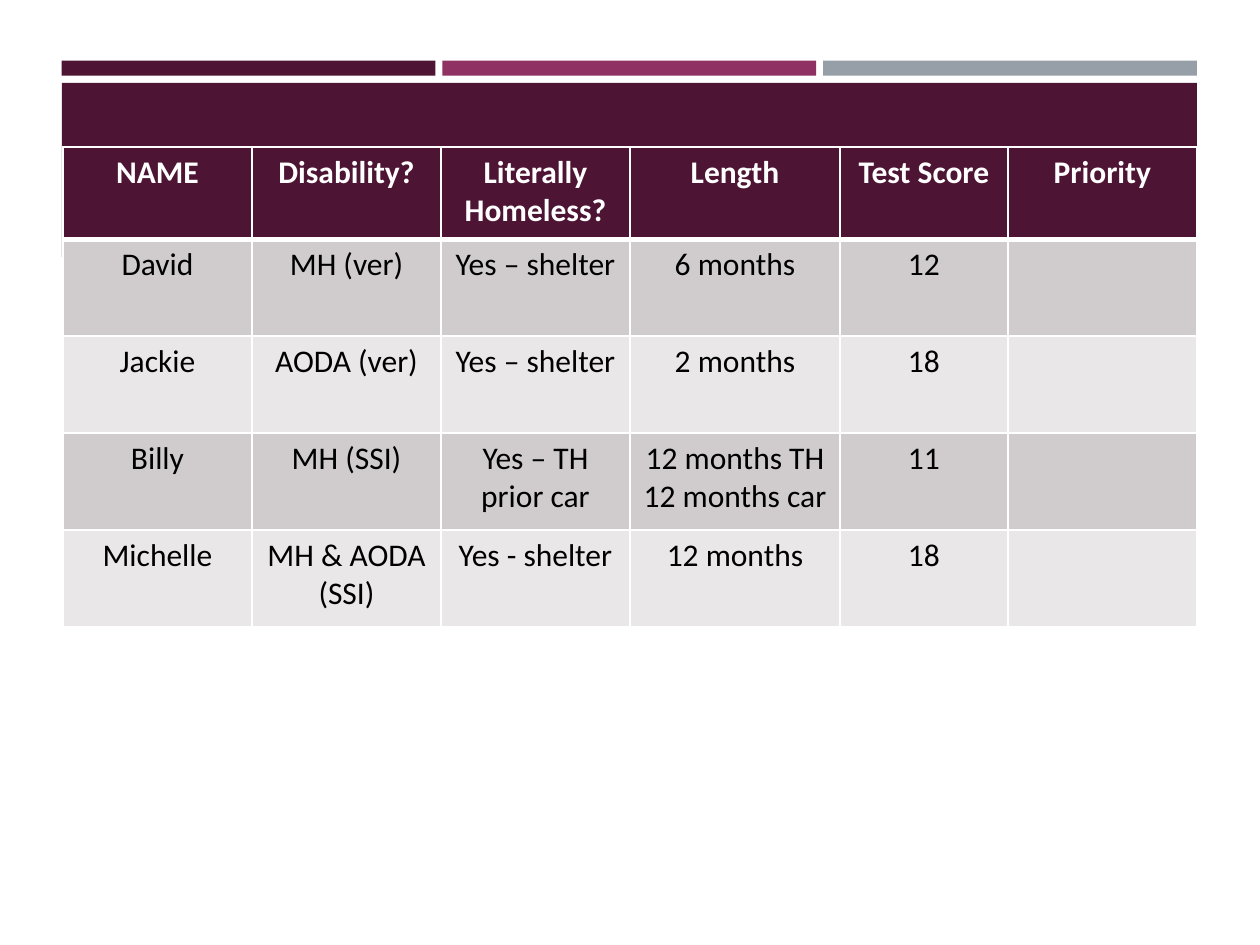
from lxml.etree import SubElement
from pptx import Presentation
from pptx.dml.color import RGBColor
from pptx.enum.shapes import MSO_SHAPE
from pptx.enum.text import PP_ALIGN
from pptx.oxml.ns import qn
from pptx.util import Pt

PLUM, MAGENTA, GREY = "4D1434", "903163", "969FA7"
WHITE, BLACK = "FFFFFF", "000000"
ROW_FILLS = ["D0CCCE", "E9E7E8"]
COLUMN_WIDTHS = [108, 108, 108, 120, 96, 108]
ROW_HEIGHTS = [52.7, 55.4, 55.4, 55.4, 55.4]
ROWS = [
    ["NAME", "Disability?", "Literally Homeless?", "Length", "Test Score", "Priority"],
    ["David", "MH (ver)", "Yes – shelter", "6 months", "12", ""],
    ["Jackie", "AODA (ver)", "Yes – shelter", "2 months", "18", ""],
    ["Billy", "MH (SSI)", "Yes – TH prior car", "12 months TH 12 months car", "11", ""],
    ["Michelle", "MH & AODA (SSI)", "Yes - shelter", "12 months", "18", ""],
]


def set_fill(item, color):
    item.fill.solid()
    item.fill.fore_color.rgb = RGBColor.from_string(color)


def add_rectangle(slide, left, top, width, height, color):
    shape = slide.shapes.add_shape(
        MSO_SHAPE.RECTANGLE, Pt(left), Pt(top), Pt(width), Pt(height))
    shape.shadow.inherit = False
    shape.line.fill.background()
    set_fill(shape, color)


def add_accent_bars(slide, left, top, width, height, gap):
    colors = [PLUM, MAGENTA, GREY]
    bar_width = (width - gap * (len(colors) - 1)) / len(colors)
    for index, color in enumerate(colors):
        add_rectangle(slide, left + index * (bar_width + gap), top, bar_width, height, color)


def set_borders(cell, widths):
    properties = cell._tc.get_or_add_tcPr()
    for side, width in widths.items():
        line = SubElement(properties, qn(f"a:ln{side}"), w=str(Pt(width)))
        fill = SubElement(line, qn("a:solidFill"))
        SubElement(fill, qn("a:srgbClr"), val=WHITE)


def format_cell(cell, text, row_index):
    is_header = row_index == 0
    set_borders(cell, {"L": 1, "R": 1, "T": 3 if row_index == 1 else 1,
                       "B": 3 if is_header else 1})
    set_fill(cell, PLUM if is_header else ROW_FILLS[(row_index - 1) % 2])
    cell.text_frame.text = text
    paragraph = cell.text_frame.paragraphs[0]
    paragraph.alignment = PP_ALIGN.CENTER
    font = paragraph.runs[0].font if paragraph.runs else paragraph.font
    font.name = "Calibri"
    font.size = Pt(18)
    font.bold = is_header
    font.color.rgb = RGBColor.from_string(WHITE if is_header else BLACK)


def add_client_table(slide, left, top):
    table = slide.shapes.add_table(
        len(ROWS), len(COLUMN_WIDTHS), Pt(left), Pt(top),
        Pt(sum(COLUMN_WIDTHS)), Pt(sum(ROW_HEIGHTS))).table
    for column, width in zip(table.columns, COLUMN_WIDTHS):
        column.width = Pt(width)
    for row_index, (row, height) in enumerate(zip(table.rows, ROW_HEIGHTS)):
        row.height = Pt(height)
        for cell, text in zip(row.cells, ROWS[row_index]):
            format_cell(cell, text, row_index)


def main():
    presentation = Presentation()
    presentation.slide_width = Pt(720)
    presentation.slide_height = Pt(540)
    slide = presentation.slides.add_slide(presentation.slide_layouts[6])
    add_accent_bars(slide, 35.3, 34.7, 648.7, 8.6, 4)
    add_rectangle(slide, 35.3, 47.4, 648.7, 99.4, PLUM)
    add_client_table(slide, 36, 84)
    presentation.save("out.pptx")


if __name__ == "__main__":
    main()
